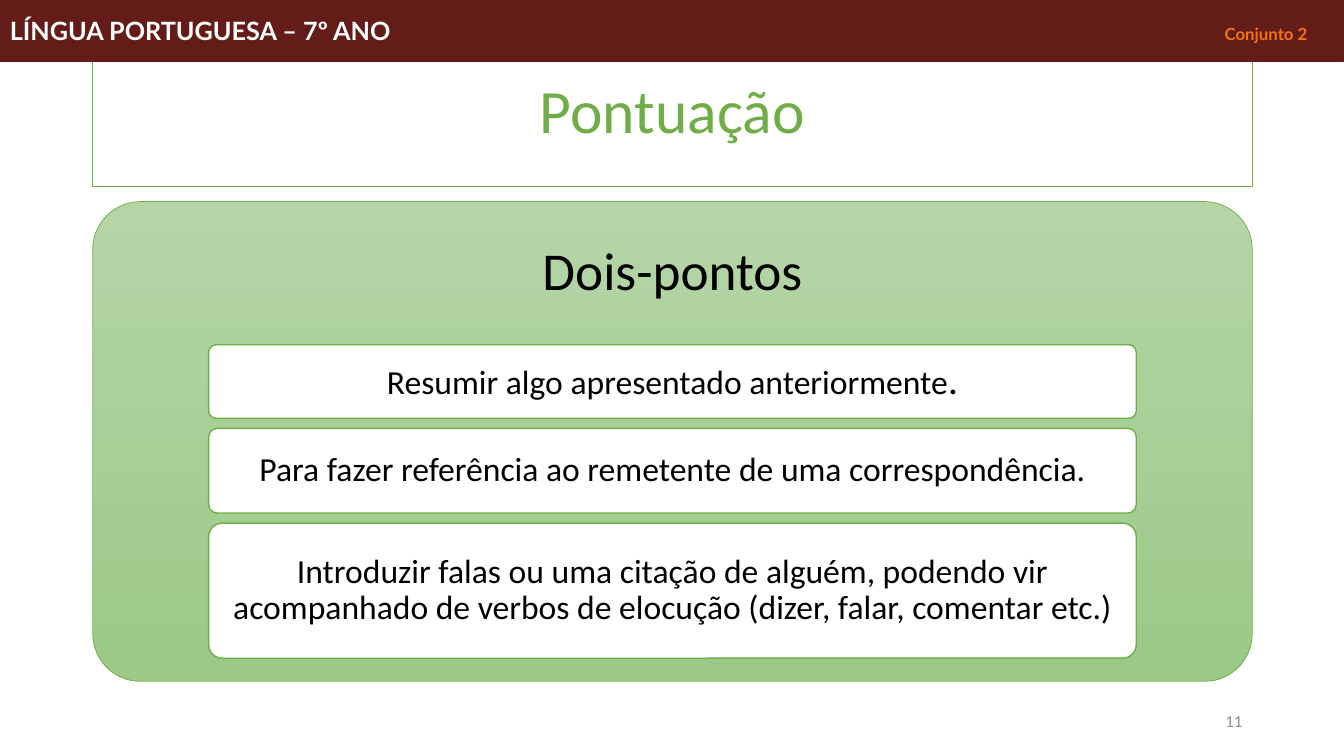
from lxml import etree
from pptx import Presentation
from pptx.dml.color import RGBColor
from pptx.enum import shapes, text
from pptx.oxml.ns import qn
from pptx.util import Inches, Pt

TITLE = "Pontuação"
HEADING = "Dois-pontos"
COURSE, SET_NAME = "LÍNGUA PORTUGUESA – 7º ANO", "Conjunto 2"
PAGE = "11"
# Card height, then its runs as (text, size)
CARDS = [
    (0.73, [("Resumir algo apresentado anteriormente", 24), (".", 28)]),
    (0.84, [("Para fazer referência ao remetente de uma correspondência.", 24)]),
    (1.34, [("Introduzir falas ou uma citação de alguém, podendo vir acompanhado "
             "de verbos de elocução (dizer, falar, comentar etc.)", 24)]),
]
GREEN, WHITE, BLACK, MAROON = "70AD47", "FFFFFF", "000000", "631C18"
SLIDE_W, SLIDE_H = 13.33, 7.5
LEFT, WIDTH = 0.92, 11.5
CARD_LEFT, CARD_TOP, CARD_W, CARD_GAP = 2.07, 3.42, 9.2, 0.1


def rgb(value):
    return RGBColor.from_string(value)


def box(*lengths):
    return [Inches(length) for length in lengths]


def outline(sp, color, width):
    sp.line.color.rgb = rgb(color)
    sp.line.width = Pt(width)


def solid(sp, fill, line, width):
    sp.fill.solid()
    sp.fill.fore_color.rgb = rgb(fill)
    outline(sp, line, width)


def add_shape(s, kind, *at):
    sp = s.shapes.add_shape(kind, *box(*at))
    sp.shadow.inherit = False
    return sp


def write(sp, runs, color, align, spacing=1.0, font="Calibri"):
    tf = sp.text_frame
    tf.word_wrap = True
    tf.vertical_anchor = text.MSO_ANCHOR.MIDDLE
    p = tf.paragraphs[0]
    p.alignment = align
    p.line_spacing = spacing
    p.font.name = font
    p.font.color.rgb = rgb(color)
    for words, size in runs:
        r = p.add_run()
        r.text = words
        r.font.size = Pt(size)
    return p


prs = Presentation()
prs.slide_width, prs.slide_height = box(SLIDE_W, SLIDE_H)
s = prs.slides.add_slide(prs.slide_layouts[5])
center, right, left = text.PP_ALIGN.CENTER, text.PP_ALIGN.RIGHT, text.PP_ALIGN.LEFT
rounded = shapes.MSO_SHAPE.ROUNDED_RECTANGLE

# Title
title = s.shapes.title
title.left, title.top, title.width, title.height = box(LEFT, 0.4, WIDTH, 1.45)
solid(title, WHITE, GREEN, 1)
write(title, [(TITLE, 44)], GREEN, center, 0.9)

# Green panel and its heading
panel = add_shape(s, rounded, LEFT, 2, WIDTH, 4.76)
panel.adjustments[0] = 0.1
panel.fill.gradient()
panel.fill.gradient_angle = 270
for stop, color in zip(panel.fill.gradient_stops, ("B5D5A7", "9CC987")):
    stop.color.rgb = rgb(color)
outline(panel, GREEN, 0.5)
heading = s.shapes.add_textbox(*box(LEFT, 2, WIDTH, 1.43))
write(heading, [(HEADING, 38)], BLACK, center, 0.9)

# Cards stacked with an equal gap
top = CARD_TOP
for height, runs in CARDS:
    card = add_shape(s, rounded, CARD_LEFT, top, CARD_W, height)
    card.adjustments[0] = 0.1
    solid(card, WHITE, GREEN, 1)
    tf = card.text_frame
    tf.margin_left = tf.margin_right = Inches(0.07)
    write(card, runs, BLACK, center, 0.9)
    top += height + CARD_GAP

# Page number
number = s.shapes.add_textbox(*box(9.42, 6.95, 3, 0.4))
write(number, [(PAGE, 12)], "8C8C8C", right)

# Banner, with the set name on a right tab stop
banner = add_shape(s, shapes.MSO_SHAPE.RECTANGLE, 0, 0, SLIDE_W, 0.61)
solid(banner, MAROON, MAROON, 0.75)
p = write(banner, [(COURSE + "\t", 18), (SET_NAME, 12)], WHITE, left, font="Lato")
p.font.bold = True
p.runs[1].font.color.rgb = rgb("F47116")
tabs = etree.Element(qn("a:tabLst"))
etree.SubElement(tabs, qn("a:tab"), pos=str(Inches(12.87)), algn="r")
p.font._element.addprevious(tabs)

prs.save("out.pptx")
